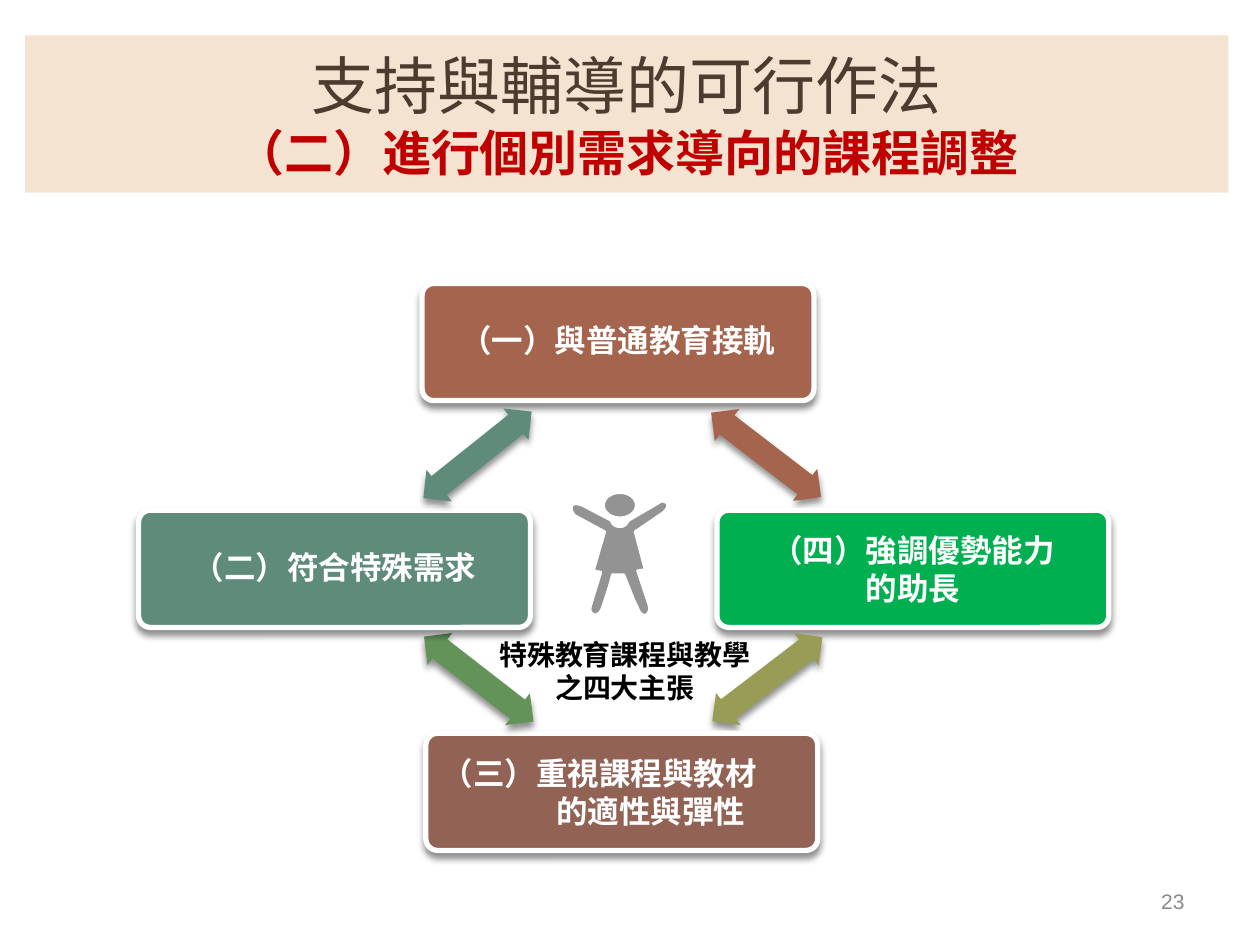
import pptx
import pptx.dml.color
import pptx.enum.shapes
import pptx.enum.text
import pptx.oxml
import pptx.oxml.ns
import pptx.util

Inches = pptx.util.Inches
Pt = pptx.util.Pt
Align = pptx.enum.text.PP_ALIGN
Preset = pptx.enum.shapes.MSO_SHAPE

BOX_SIZE = (3.11, 0.93)
ARROW_SIZE = (1.1, 0.32)
SECOND_LINE_INDENT = 0.91

TITLE_LINES = [
    ("支持與輔導的可行作法", 36, "Arial", "4E3B30", False),
    ("（二）進行個別需求導向的課程調整", 28, "Montserrat", "C00000", True),
]
BOXES = [
    (3.35, 2.25, "A5644E", "Arial", Align.CENTER, 0.9, ["（一）與普通教育接軌"]),
    (5.69, 4.05, "00B050", "Times New Roman", Align.CENTER, 1.0,
     ["（四）強調優勢能力", "的助長"]),
    (3.38, 5.82, "926255", "Arial", Align.LEFT, 1.0,
     ["（三）重視課程與教材", "的適性與彈性"]),
    (1.10, 4.05, "5E8B7A", "Arial", Align.CENTER, 0.9, ["（二）符合特殊需求"]),
]
ARROWS = [
    (5.53, 3.45, 37.5, "A5644E"),
    (5.54, 5.23, 322.6, "999C54"),
    (3.25, 5.23, 37.8, "639359"),
    (3.24, 3.45, 321.4, "5E8B7A"),
]
BODY_START = (4.85, 4.13)
BODY_SEGMENTS = [
    [(4.86, 4.16), (4.88, 4.18), (4.92, 4.18)],
    [(4.96, 4.18), (4.97, 4.16), (4.99, 4.13)],
    [(5.23, 3.99)],
    [(5.25, 3.97), (5.27, 3.98), (5.29, 3.99)],
    [(5.30, 4.00), (5.31, 4.03), (5.26, 4.07)],
    [(5.04, 4.22)], [(5.12, 4.52)], [(5.06, 4.53)], [(5.15, 4.80)],
    [(5.16, 4.84), (5.15, 4.86), (5.13, 4.88)],
    [(5.10, 4.89), (5.07, 4.86), (5.06, 4.82)],
    [(5.03, 4.77), (4.97, 4.60), (4.95, 4.56)],
    [(4.86, 4.56)],
    [(4.85, 4.61), (4.80, 4.77), (4.78, 4.82)],
    [(4.77, 4.86), (4.74, 4.88), (4.72, 4.88)],
    [(4.70, 4.87), (4.67, 4.86), (4.69, 4.80)],
    [(4.77, 4.54)], [(4.71, 4.53)], [(4.80, 4.22)], [(4.56, 4.09)],
    [(4.54, 4.06), (4.53, 4.05), (4.54, 4.01)],
    [(4.57, 3.99), (4.58, 4.00), (4.62, 4.01)],
]


def color(value):
    return pptx.dml.color.RGBColor.from_string(value)


def add_child(parent, tag, **attributes):
    child = pptx.oxml.parse_xml(f"<a:{tag} {pptx.oxml.ns.nsdecls('a')}/>")
    for name, value in attributes.items():
        child.set(name, str(value))
    parent.append(child)
    return child


def paint(shape, fill, line=None, line_width=0):
    shape.fill.solid()
    shape.fill.fore_color.rgb = color(fill)
    if line:
        shape.line.color.rgb = color(line)
        shape.line.width = Pt(line_width)
    else:
        shape.line.fill.background()
    shape.shadow.inherit = False


def drop_shadow(shape):
    effects = shape._element.spPr.find(pptx.oxml.ns.qn("a:effectLst"))
    shadow = add_child(effects, "outerShdw", blurRad=Pt(4), dist=Pt(3),
                       dir=5400000, rotWithShape=0)
    add_child(add_child(shadow, "srgbClr", val="000000"), "alpha", val=43000)


def format_run(run, size, font, text_color, bold=False):
    run.font.size = Pt(size)
    run.font.name = font
    run.font.bold = bold
    run.font.color.rgb = color(text_color)


def add_title(slide):
    title = slide.shapes.title
    title.left, title.top = Inches(0.2), Inches(0.28)
    title.width, title.height = Inches(9.55), Inches(1.25)
    title.fill.solid()
    title.fill.fore_color.rgb = color("F5E3D1")
    frame = title.text_frame
    frame.auto_size = pptx.enum.text.MSO_AUTO_SIZE.NONE
    frame.vertical_anchor = pptx.enum.text.MSO_ANCHOR.MIDDLE
    paragraph = frame.paragraphs[0]
    paragraph.text = "\v".join(line[0] for line in TITLE_LINES)
    paragraph.alignment = Align.CENTER
    for run, line in zip(paragraph.runs, TITLE_LINES):
        format_run(run, *line[1:])


def add_box(slide, left, top, fill, font, alignment, spacing, lines):
    box = slide.shapes.add_shape(Preset.ROUNDED_RECTANGLE, Inches(left),
                                 Inches(top), *map(Inches, BOX_SIZE))
    box.adjustments[0] = 0.1
    paint(box, fill, "FFFFFF", 3)
    drop_shadow(box)
    frame = box.text_frame
    frame.word_wrap = True
    frame.vertical_anchor = pptx.enum.text.MSO_ANCHOR.MIDDLE
    frame.margin_left = frame.margin_right = Inches(0.1)
    frame.margin_top = frame.margin_bottom = Inches(0.1)
    frame.text = "\n".join(lines)
    for index, paragraph in enumerate(frame.paragraphs):
        paragraph.alignment = alignment
        paragraph.line_spacing = spacing
        if alignment == Align.LEFT and index:
            properties = paragraph._p.get_or_add_pPr()
            properties.set("marL", str(Inches(SECOND_LINE_INDENT)))
        format_run(paragraph.runs[0], 18, font, "FFFFFF", True)


def add_arrow(slide, left, top, rotation, fill):
    arrow = slide.shapes.add_shape(Preset.LEFT_RIGHT_ARROW, Inches(left),
                                   Inches(top), *map(Inches, ARROW_SIZE))
    arrow.adjustments[0] = 0.6
    arrow.adjustments[1] = 0.5
    arrow.rotation = rotation
    paint(arrow, fill)
    drop_shadow(arrow)


def curve_points(start, first, second, end, steps=8):
    for step in range(1, steps + 1):
        t = step / steps
        weights = ((1 - t) ** 3, 3 * t * (1 - t) ** 2, 3 * t * t * (1 - t), t ** 3)
        yield tuple(sum(weight * point[axis] for weight, point
                        in zip(weights, (start, first, second, end)))
                    for axis in (0, 1))


def add_person(slide):
    points = [BODY_START]
    for segment in BODY_SEGMENTS:
        if len(segment) == 3:
            points.extend(curve_points(points[-1], *segment))
        else:
            points.extend(segment)
    outline = [(Inches(x), Inches(y)) for x, y in points]
    person = slide.shapes.add_group_shape()
    builder = person.shapes.build_freeform(*outline[0])
    builder.add_line_segments(outline[1:], close=True)
    body = builder.convert_to_shape()
    head = person.shapes.add_shape(Preset.OVAL, Inches(4.79), Inches(3.91),
                                   Inches(0.26), Inches(0.2))
    for part in (body, head):
        paint(part, "292929", "FFFFFF", 1.5)
        fill = part._element.spPr.find(pptx.oxml.ns.qn("a:solidFill"))
        add_child(fill[0], "alpha", val=50000)


def add_text(slide, bounds, text, alignment, anchor, *style):
    frame = slide.shapes.add_textbox(*map(Inches, bounds)).text_frame
    frame.word_wrap = True
    frame.vertical_anchor = anchor
    frame.text = text
    frame.paragraphs[0].alignment = alignment
    format_run(frame.paragraphs[0].runs[0], *style)


def main():
    presentation = pptx.Presentation()
    presentation.slide_width, presentation.slide_height = Inches(10), Inches(7.5)
    slide = presentation.slides.add_slide(presentation.slide_layouts[5])
    add_title(slide)
    for box, arrow in zip(BOXES, ARROWS):
        add_box(slide, *box)
        add_arrow(slide, *arrow)
    add_person(slide)
    anchors = pptx.enum.text.MSO_ANCHOR
    add_text(slide, (3.82, 5.01, 2.28, 0.64), "特殊教育課程與教學之四大主張",
             Align.CENTER, anchors.TOP, 16, "Noto Sans CJK SC", "000000", True)
    add_text(slide, (7.17, 6.95, 2.33, 0.4), "23",
             Align.RIGHT, anchors.MIDDLE, 12, "Arial", "898989")
    presentation.save("out.pptx")


if __name__ == "__main__":
    main()
